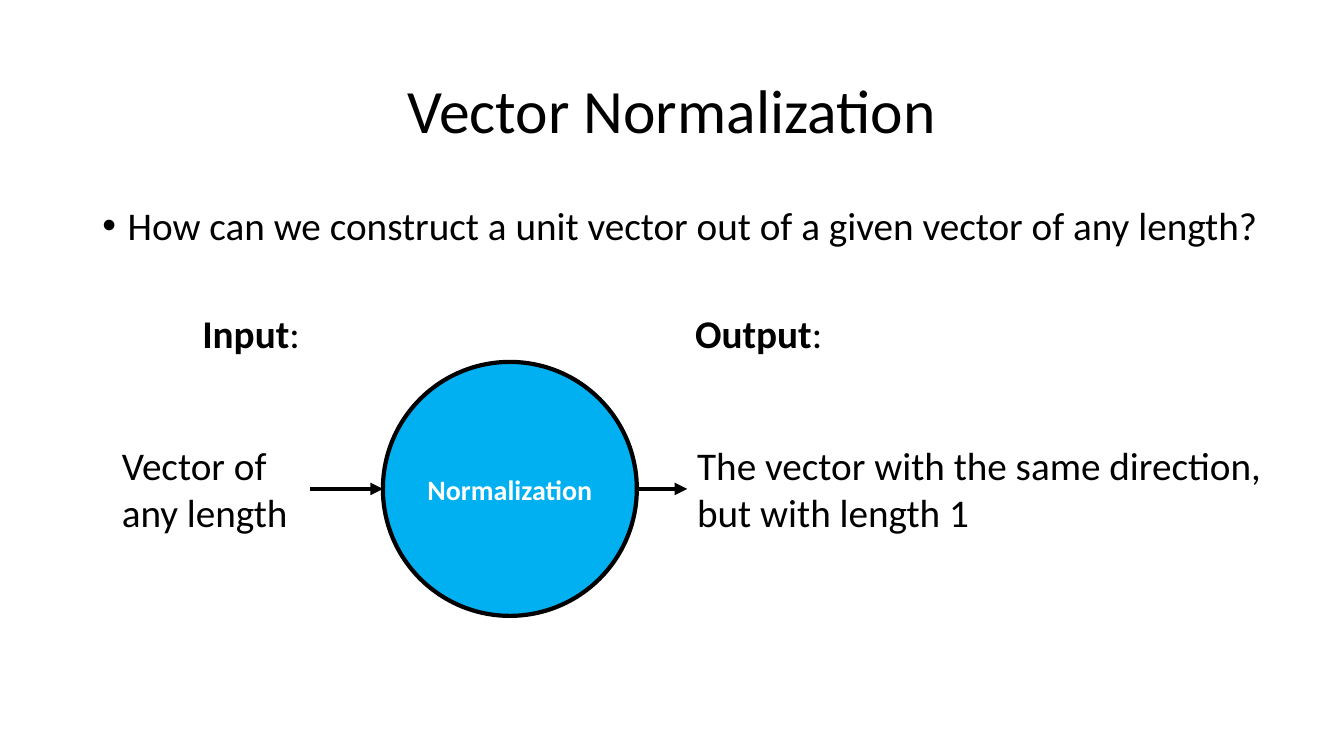
import pptx
import pptx.util
import pptx.dml.color
import pptx.enum.shapes
import pptx.enum.text
import pptx.oxml.ns
import lxml.etree

Cm, Pt = pptx.util.Cm, pptx.util.Pt
qn = pptx.oxml.ns.qn
Align = pptx.enum.text.PP_ALIGN
Anchor = pptx.enum.text.MSO_ANCHOR
COLORS = {"ink": "000000", "disc": "00B0F0", "light": "FFFFFF"}


def color(name):
    return pptx.dml.color.RGBColor.from_string(COLORS[name])


def write(para, text, size=28, bold=False, ink="ink"):
    run = para.add_run()
    run.text = text
    run.font.name = "Calibri"
    run.font.size = Pt(size)
    run.font.bold = bold
    run.font.color.rgb = color(ink)


deck = pptx.Presentation()
deck.slide_width, deck.slide_height = Cm(33.87), Cm(19.05)
slide = deck.slides.add_slide(deck.slide_layouts[5])
shapes = slide.shapes

# Title
title = shapes.title
title.left, title.top = Cm(2.33), Cm(1.01)
title.width, title.height = Cm(29.21), Cm(3.68)
title.text_frame.vertical_anchor = Anchor.MIDDLE
para = title.text_frame.paragraphs[0]
para.alignment = Align.CENTER
para.line_spacing = 0.9
write(para, "Vector Normalization", 44)

# Question with a bullet
box = shapes.add_textbox(Cm(2.33), Cm(5.07), Cm(30.12), Cm(1.5))
box.text_frame.word_wrap = True
para = box.text_frame.paragraphs[0]
para.line_spacing = 0.9
write(para, "How can we construct a unit vector out of a given vector of any length?")
props = para._p.get_or_add_pPr()
props.set("marL", str(Cm(0.64)))
props.set("indent", str(-Cm(0.64)))
lxml.etree.SubElement(props, qn("a:buFont")).set("typeface", "Arial")
lxml.etree.SubElement(props, qn("a:buChar")).set("char", "•")

# Normalization disc
disc = shapes.add_shape(pptx.enum.shapes.MSO_SHAPE.OVAL,
                        Cm(9.65), Cm(9.12), Cm(6.4), Cm(6.4))
disc.shadow.inherit = False
disc.fill.solid()
disc.fill.fore_color.rgb = color("disc")
disc.line.color.rgb = color("ink")
disc.line.width = Pt(3)
frame = disc.text_frame
frame.margin_left = frame.margin_right = 0
frame.vertical_anchor = Anchor.MIDDLE
para = frame.paragraphs[0]
para.alignment = Align.CENTER
write(para, "Normalization", 20, True, "light")

# Headings and descriptions: left, top, width, height, lines of (text, bold)
labels = [
    (4.85, 7.67, 3.23, 1.45, [[("Input", True), (":", False)]]),
    (17.27, 7.67, 3.99, 1.45, [[("Output", True), (":", False)]]),
    (2.82, 11, 4.95, 2.64, [[("Vector of ", False)], [("any length", False)]]),
    (17.32, 11, 15.11, 2.64, [[("The vector with the same direction, ", False)],
                              [("but with length 1", False)]]),
]
for left, top, width, height, lines in labels:
    box = shapes.add_textbox(Cm(left), Cm(top), Cm(width), Cm(height))
    box.text_frame.word_wrap = False
    para = box.text_frame.paragraphs[0]
    for row, line in enumerate(lines):
        if row:
            para.add_line_break()
        for text, bold in line:
            write(para, text, bold=bold)

# Arrows into and out of the disc
mid = Cm(12.32)
for start, end in [(7.8, 9.65), (16.05, 17.32)]:
    arrow = shapes.add_connector(pptx.enum.shapes.MSO_CONNECTOR.STRAIGHT,
                                 Cm(start), mid, Cm(end), mid)
    arrow.line.color.rgb = color("ink")
    arrow.line.width = Pt(3)
    tip = lxml.etree.SubElement(arrow.line._get_or_add_ln(), qn("a:tailEnd"))
    tip.set("type", "triangle")
    lxml.etree.SubElement(arrow._element.spPr, qn("a:effectLst"))

deck.save("out.pptx")
